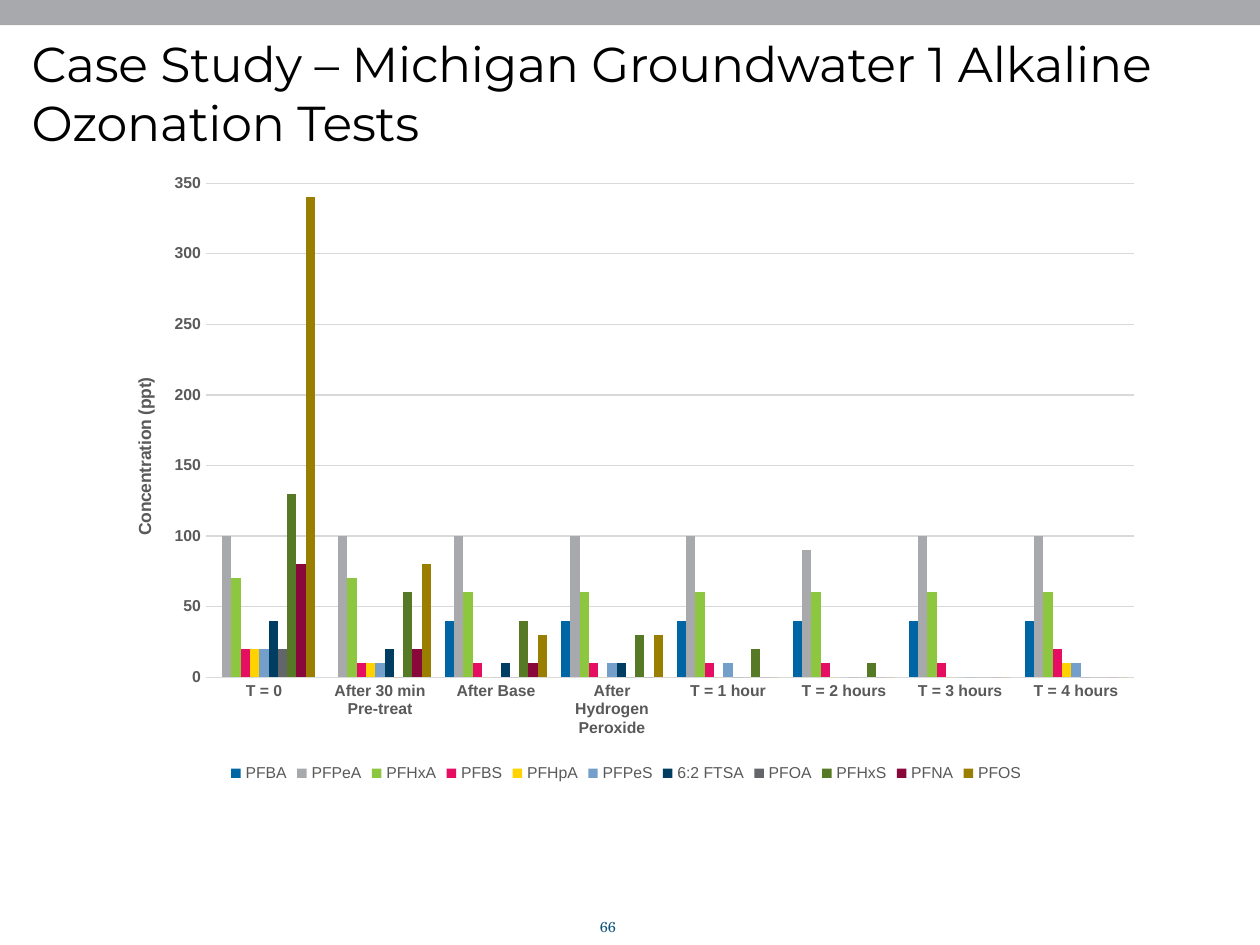
from dataclasses import dataclass

from lxml import etree
from pptx import Presentation
from pptx.chart.data import CategoryChartData
from pptx.dml.color import RGBColor
from pptx.enum.chart import XL_CHART_TYPE, XL_LEGEND_POSITION, XL_TICK_MARK
from pptx.enum.shapes import MSO_SHAPE
from pptx.enum.text import MSO_ANCHOR, MSO_AUTO_SIZE, PP_ALIGN
from pptx.oxml.ns import qn
from pptx.util import Inches, Pt

CLUSTERED = XL_CHART_TYPE.COLUMN_CLUSTERED
LEGEND_BOTTOM = XL_LEGEND_POSITION.BOTTOM
NO_TICK = XL_TICK_MARK.NONE
RECTANGLE = MSO_SHAPE.RECTANGLE
MIDDLE = MSO_ANCHOR.MIDDLE
GROW = MSO_AUTO_SIZE.SHAPE_TO_FIT_TEXT
LEFT, CENTER = PP_ALIGN.LEFT, PP_ALIGN.CENTER
TITLE_ONLY = 5


@dataclass(frozen=True)
class Theme:
    title_font: str = "Montserrat"
    chart_font: str = "Arial"
    number_font: str = "TeX Gyre Schola"
    title_size: float = 28
    chart_size: float = 10
    label_size: float = 9
    number_size: float = 8.3
    black: str = "000000"
    band: str = "A7A9AC"
    label: str = "595959"
    grid: str = "D9D9D9"
    number: str = "10577E"


CATEGORIES = [
    "T = 0", "After 30 min Pre-treat", "After Base", "After Hydrogen Peroxide",
    "T = 1 hour", "T = 2 hours", "T = 3 hours", "T = 4 hours",
]
COMPOUNDS = [
    ("PFBA", "0065A4", [None, None, 40, 40, 40, 40, 40, 40]),
    ("PFPeA", "A7A9AC", [100, 100, 100, 100, 100, 90, 100, 100]),
    ("PFHxA", "8DC63F", [70, 70, 60, 60, 60, 60, 60, 60]),
    ("PFBS", "E50E63", [20, 10, 10, 10, 10, 10, 10, 20]),
    ("PFHpA", "FFD200", [20, 10, 0, 0, 0, 0, 0, 10]),
    ("PFPeS", "749FCB", [20, 10, 0, 10, 10, 0, 0, 10]),
    ("6:2 FTSA", "003D62", [40, 20, 10, 10, 0, 0, 0, 0]),
    ("PFOA", "636569", [20, 0, 0, 0, 0, 0, 0, 0]),
    ("PFHxS", "557924", [130, 60, 40, 30, 20, 10, 0, 0]),
    ("PFNA", "89083B", [80, 20, 10, 0, 0, 0, 0, 0]),
    ("PFOS", "997E00", [340, 80, 30, 30, 0, 0, 0, 0]),
]


def style_font(font, name, size, color, bold=False):
    font.name = name
    font.size = Pt(size)
    font.bold = bold
    font.color.rgb = RGBColor.from_string(color)


def place_in_chart(parent, index, **fractions):
    """Fix a chart part at fractions of the chart's width and height."""
    for old in parent.findall(qn("c:layout")):
        parent.remove(old)
    layout = etree.Element(qn("c:layout"))
    manual = etree.SubElement(layout, qn("c:manualLayout"))
    settings = {"xMode": "edge", "yMode": "edge", **fractions}
    if "w" in fractions:
        settings = {"layoutTarget": "inner", **settings}
    for tag, value in settings.items():
        etree.SubElement(manual, qn(f"c:{tag}")).set("val", str(value))
    parent.insert(index, layout)


class SlideBuilder:
    def __init__(self, slide, theme):
        self.slide = slide
        self.theme = theme

    def band(self, *box):
        band = self.slide.shapes.add_shape(RECTANGLE, *map(Inches, box))
        band.shadow.inherit = False
        band.fill.solid()
        band.fill.fore_color.rgb = RGBColor.from_string(self.theme.band)
        band.line.fill.background()

    def title(self, text, *box):
        title = self.slide.shapes.title
        title.left, title.top, title.width, title.height = map(Inches, box)
        frame = title.text_frame
        frame.text = text
        frame.word_wrap = True
        frame.auto_size = GROW
        frame.vertical_anchor = MIDDLE
        frame.margin_left = frame.margin_right = frame.margin_bottom = 0
        frame.margin_top = Inches(0.01)
        paragraph = frame.paragraphs[0]
        paragraph.alignment = LEFT
        run = paragraph.runs[0]
        style_font(run.font, self.theme.title_font, self.theme.title_size, self.theme.black)
        run.font._element.set("spc", "-10")

    def page_number(self, text, *box):
        frame = self.slide.shapes.add_textbox(*map(Inches, box)).text_frame
        frame.text = text
        frame.word_wrap = True
        frame.vertical_anchor = MIDDLE
        paragraph = frame.paragraphs[0]
        paragraph.alignment = CENTER
        style_font(paragraph.runs[0].font, self.theme.number_font,
                   self.theme.number_size, self.theme.number)

    def column_chart(self, categories, series, axis_title, *box):
        theme = self.theme
        data = CategoryChartData()
        data.categories = categories
        for name, _, values in series:
            data.add_series(name, values)
        chart = self.slide.shapes.add_chart(CLUSTERED, *map(Inches, box), data).chart
        style_font(chart.font, theme.chart_font, theme.chart_size, theme.black)
        chart.has_title = False

        plot = chart.plots[0]
        plot.vary_by_categories = False
        plot.gap_width = 150
        plot.overlap = 0
        for columns, (_, color, _) in zip(plot.series, series):
            columns.invert_if_negative = False
            columns.format.fill.solid()
            columns.format.fill.fore_color.rgb = RGBColor.from_string(color)

        for axis in (chart.category_axis, chart.value_axis):
            axis.major_tick_mark = axis.minor_tick_mark = NO_TICK
            style_font(axis.tick_labels.font, theme.chart_font, theme.label_size,
                       theme.label, bold=True)
        value_axis = chart.value_axis
        value_axis.minimum_scale = 0
        value_axis.maximum_scale = 350
        value_axis.major_unit = 50
        value_axis.format.line.fill.background()
        for line in (chart.category_axis.format.line, value_axis.major_gridlines.format.line):
            line.color.rgb = RGBColor.from_string(theme.grid)
            line.width = Pt(0.75)

        heading = value_axis.axis_title
        heading.text_frame.text = axis_title
        style_font(heading.text_frame.paragraphs[0].runs[0].font, theme.chart_font,
                   theme.chart_size, theme.label, bold=True)
        place_in_chart(heading._element, 1, x=0.03, y=0.34)
        place_in_chart(plot._element.getparent(), 0, x=0.102, y=0.035, w=0.879, h=0.789)

        chart.has_legend = True
        chart.legend.position = LEGEND_BOTTOM
        chart.legend.include_in_layout = False
        style_font(chart.legend.font, theme.chart_font, theme.label_size, theme.label)


def main():
    presentation = Presentation()
    presentation.slide_width = Inches(10)
    presentation.slide_height = Inches(7.5)
    slide = presentation.slides.add_slide(presentation.slide_layouts[TITLE_ONLY])
    builder = SlideBuilder(slide, Theme())
    builder.band(0, 0, 10, 0.2)
    builder.title("Case Study – Michigan Groundwater 1 Alkaline Ozonation Tests",
                  0.25, 0.25, 9.58, 0.96)
    builder.column_chart(CATEGORIES, COMPOUNDS, "Concentration (ppt)",
                         0.78, 1.28, 8.38, 4.97)
    builder.page_number("66", 4.44, 7.23, 0.77, 0.25)
    presentation.save("out.pptx")


if __name__ == "__main__":
    main()
